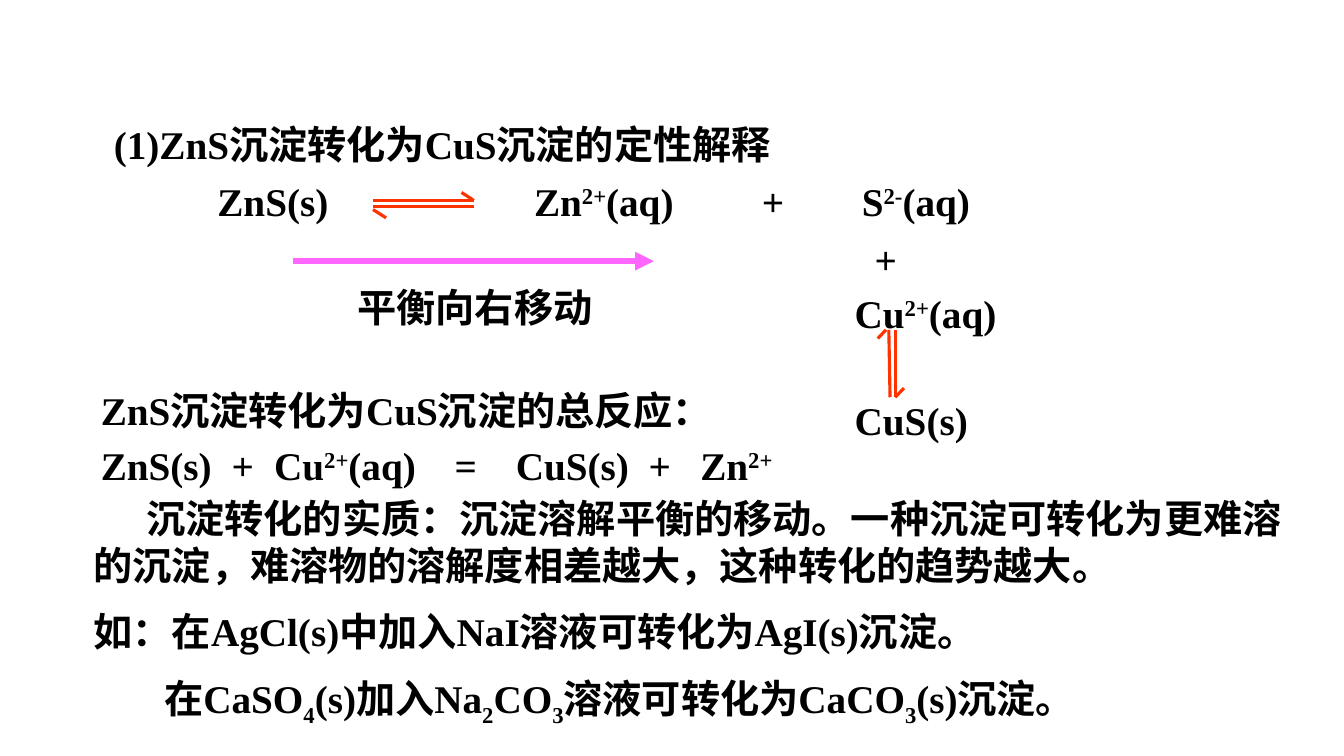
"""Builds a slide on how a ZnS precipitate turns into a CuS precipitate."""
from lxml.etree import SubElement
from pptx import Presentation
from pptx.dml.color import RGBColor
from pptx.enum.shapes import MSO_CONNECTOR as Connector
from pptx.enum.text import MSO_AUTO_SIZE as AutoSize
from pptx.oxml.ns import qn
from pptx.util import Cm, Pt

COLORS = {"ink": "000000", "equilibrium": "FF3300", "shift": "FF66FF"}


class ChemistrySlide:
    """Holds the style and draws text and lines on the current slide."""

    font = "Times New Roman"
    size = Pt(28)
    row_height = 1.45

    def __init__(self, slide):
        self.slide = slide

    def text(self, left, top, width, height, lines, spacing=None, margin=0.25):
        """Adds lines given as (marked text, first-line indent, space before)."""
        box = self.slide.shapes.add_textbox(Cm(left), Cm(top), Cm(width), Cm(height))
        frame = box.text_frame
        frame.word_wrap = True
        frame.auto_size = AutoSize.SHAPE_TO_FIT_TEXT
        frame.margin_left = frame.margin_right = Cm(margin)
        for number, (marked, indent, before) in enumerate(lines):
            paragraph = frame.add_paragraph() if number else frame.paragraphs[0]
            paragraph.space_before = Pt(before)
            if spacing:
                paragraph.line_spacing = spacing
            properties = paragraph._p.get_or_add_pPr()
            properties.set("marL", "0")
            properties.set("indent", str(Cm(indent)))
            self.formula(paragraph, marked)

    def equation(self, top, right, terms):
        """Places each (left, term) of an equation, up to the next term."""
        ends = [left for left, _ in terms[1:]] + [right]
        for (left, term), end in zip(terms, ends):
            self.text(left, top, end - left, self.row_height, [(term, 0, 0)], margin=0)

    def formula(self, paragraph, marked):
        """Raises charges and lowers counts, which stand between bars."""
        for number, part in enumerate(marked.split("|")):
            if not part:
                continue
            run = paragraph.add_run()
            run.text = part
            run.font.name = self.font
            run.font.size = self.size
            run.font.bold = True
            run.font.color.rgb = RGBColor.from_string(COLORS["ink"])
            if number % 2:
                shift = 30000 if part[-1] in "+-" else -25000
                run.font._element.set("baseline", str(shift))

    def line(self, start, end, color, weight, arrow=False):
        """Adds a straight line, with an arrowhead at its end if asked."""
        line = self.slide.shapes.add_connector(
            Connector.STRAIGHT, *(Cm(value) for value in start + end))
        line.line.color.rgb = RGBColor.from_string(COLORS[color])
        line.line.width = Pt(weight)
        if arrow:
            SubElement(line.line._get_or_add_ln(), qn("a:tailEnd"), type="triangle")
        SubElement(line._element.spPr, qn("a:effectLst"))


def main():
    """Draws the slide and saves it."""
    deck = Presentation()
    deck.slide_width, deck.slide_height = Cm(33.87), Cm(19.05)
    page = ChemistrySlide(deck.slides.add_slide(deck.slide_layouts[6]))
    row = page.row_height

    page.equation(4.34, 30.15, [
        (5.48, "ZnS(s)"), (13.46, "Zn|2+|(aq)"), (19.2, "+"), (21.72, "S|2-|(aq)")])
    half_arrows = [
        ((9.4, 5.05), (11.94, 5.05)), ((11.63, 4.85), (11.94, 5.05)),
        ((9.4, 5.21), (11.94, 5.21)), ((9.4, 5.28), (9.73, 5.49)),
        ((22.56, 8.31), (22.56, 10.01)), ((22.78, 9.78), (22.56, 10.01)),
        ((22.4, 8.31), (22.43, 10.01)), ((22.33, 8.31), (22.12, 8.53)),
    ]
    for start, end in half_arrows:
        page.line(start, end, "equilibrium", 2.25)
    page.text(21.29, 5.64, 4.67, 5.61, [
        ("+", 0.5, 0), ("Cu|2+|(aq)", 0, 0), ("CuS(s)", 0, 38)], spacing=1.14)

    page.line((7.39, 6.58), (16.48, 6.58), "shift", 4.5, arrow=True)
    page.text(6.76, 7.01, 9.73, row, [("平衡向右移动", 2, 0)])

    page.text(2.29, 9.6, 19.69, row, [("ZnS沉淀转化为CuS沉淀的总反应：", 0, 0)])
    page.equation(11, 25.15, [
        (2.54, "ZnS(s)"), (5.84, "+"), (6.91, "Cu|2+|(aq)"), (11.46, "="),
        (13, "CuS(s)"), (16.35, "+"), (17.65, "Zn|2+|")])
    page.text(2.11, 12.32, 31.17, 6.25, [
        ("沉淀转化的实质：沉淀溶解平衡的移动。一种沉淀可转化为更难溶的沉淀，"
         "难溶物的溶解度相差越大，这种转化的趋势越大。", 1.33, 0),
        ("如：在AgCl(s)中加入NaI溶液可转化为AgI(s)沉淀。", 0, 14),
        ("在CaSO|4|(s)加入Na|2|CO|3|溶液可转化为CaCO|3|(s)沉淀。", 1.78, 14)])
    page.text(2.62, 2.9, 19.84, row, [("(1)ZnS沉淀转化为CuS沉淀的定性解释", 0, 0)])
    deck.save("out.pptx")


if __name__ == "__main__":
    main()
